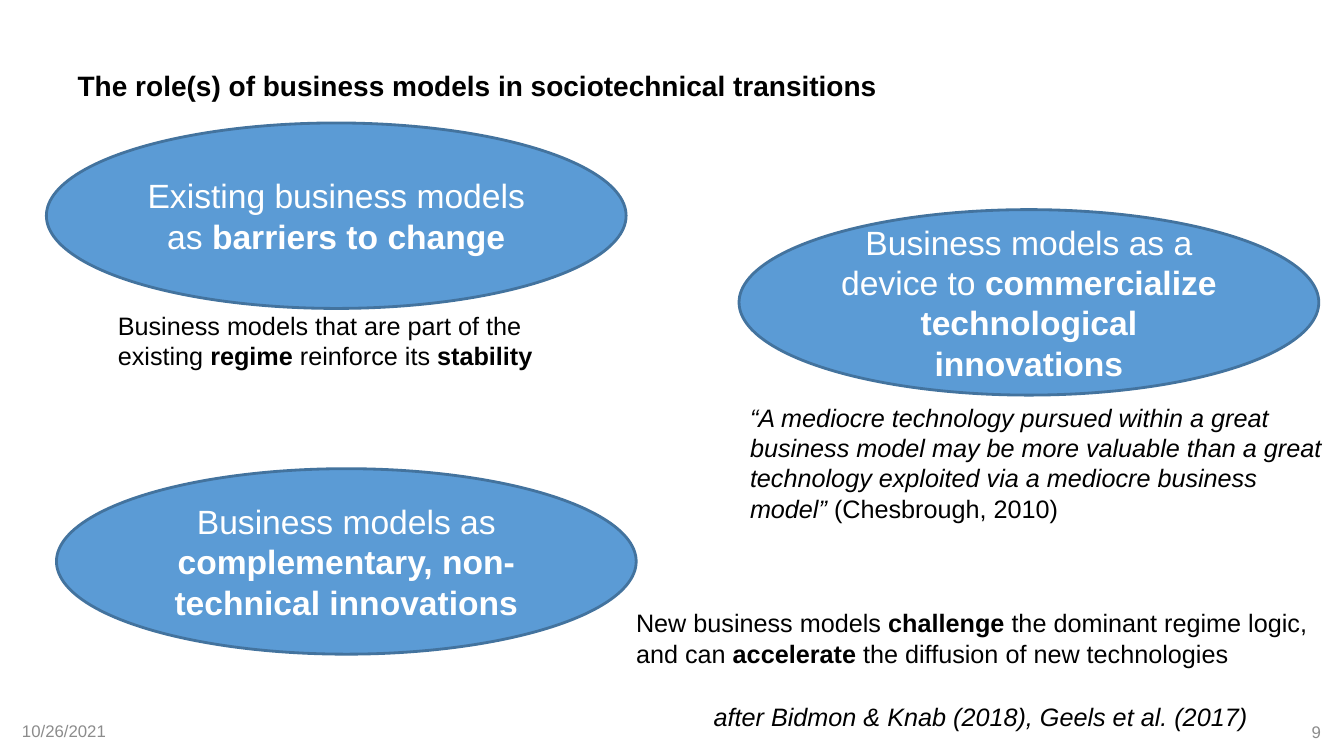
from pptx import Presentation
from pptx.dml.color import RGBColor
from pptx.enum.shapes import MSO_SHAPE as Shape
from pptx.enum.text import MSO_ANCHOR as Anchor, MSO_AUTO_SIZE as AutoSize, PP_ALIGN as Align
from pptx.util import Inches, Pt

BLACK = RGBColor(0x00, 0x00, 0x00)
WHITE = RGBColor(0xFF, 0xFF, 0xFF)
GREY = RGBColor(0x8C, 0x8C, 0x8C)
BLUE = RGBColor(0x5B, 0x9B, 0xD5)
DARK_BLUE = RGBColor(0x43, 0x73, 0x9E)

# Content: each run is (text, style), with style "b" bold, "i" italic or "" plain
TITLE = [("The role(s) of business models in sociotechnical transitions", "b")]

ROLE_SIZE = (5.75, 1.84)
ROLES = [  # left, top, runs
    (0.46, 1.22, [("Existing business models as ", ""), ("barriers to change", "b")]),
    (7.33, 2.08, [("Business models as a device to ", ""),
                  ("commercialize technological innovations", "b")]),
    (0.56, 4.65, [("Business models as ", ""),
                  ("complementary, non-technical innovations", "b")]),
]

EXPLANATIONS = [  # box, wraps, runs
    ((7.34, 3.94, 6.05, 1.31), True, [
        ("“A mediocre technology pursued within a great business model may be more "
         "valuable than a great technology exploited via a mediocre business model”", "i"),
        (" (Chesbrough, 2010)", "")]),
    ((1.07, 3.03, 4.72, 0.71), True, [
        ("Business models that are part of the existing ", ""), ("regime ", "b"),
        ("reinforce its ", ""), ("stability", "b")]),
    ((6.21, 5.98, 6.99, 0.71), True, [
        ("New business models ", ""), ("challenge ", "b"),
        ("the dominant regime logic, and can ", ""), ("accelerate ", "b"),
        ("the diffusion of new technologies", "")]),
    ((6.98, 6.91, 5.55, 0.4), False, [
        ("after Bidmon & Knab (2018), Geels et al. (2017)", "i")]),
]

FOOTERS = [  # box, alignment, runs
    ((0.12, 7.05, 3, 0.4), Align.LEFT, [("10/26/2021", "")]),
    ((10.2, 7.06, 3, 0.4), Align.RIGHT, [("9", "")]),
]


def write_runs(shape, runs, size, color, align=Align.LEFT, anchor=Anchor.MIDDLE, wrap=True):
    frame = shape.text_frame
    frame.auto_size = AutoSize.NONE
    frame.word_wrap = wrap
    frame.vertical_anchor = anchor
    paragraph = frame.paragraphs[0]
    paragraph.alignment = align
    for text, style in runs:
        run = paragraph.add_run()
        run.text = text
        font_format = {"name": "Arial", "size": Pt(size),
                       "bold": style == "b", "italic": style == "i"}
        for attribute, value in font_format.items():
            setattr(run.font, attribute, value)
        run.font.color.rgb = color


def add_text(slide, box, runs, size, color, **layout):
    shape = slide.shapes.add_textbox(*map(Inches, box))
    write_runs(shape, runs, size, color, **layout)


def add_role(slide, left, top, runs):
    shape = slide.shapes.add_shape(Shape.OVAL, *map(Inches, (left, top, *ROLE_SIZE)))
    shape.shadow.inherit = False
    shape.fill.solid()
    shape.fill.fore_color.rgb = BLUE
    shape.line.color.rgb = DARK_BLUE
    shape.line.width = Pt(2)
    write_runs(shape, runs, 24, WHITE, align=Align.CENTER)


def main():
    presentation = Presentation()
    presentation.slide_width = Inches(13.33)
    presentation.slide_height = Inches(7.5)
    slide = presentation.slides.add_slide(presentation.slide_layouts[5])

    # Title
    title = slide.shapes.title
    title.left, title.top, title.width, title.height = map(Inches, (0.67, 0.22, 10.25, 1.25))
    write_runs(title, TITLE, 20, BLACK)

    # Date and slide number
    for box, align, runs in FOOTERS:
        add_text(slide, box, runs, 12, GREY, align=align)

    # Roles and their explanations
    for role in ROLES:
        add_role(slide, *role)
    for box, wrap, runs in EXPLANATIONS:
        add_text(slide, box, runs, 18, BLACK, anchor=Anchor.TOP, wrap=wrap)

    presentation.save("out.pptx")


if __name__ == "__main__":
    main()
